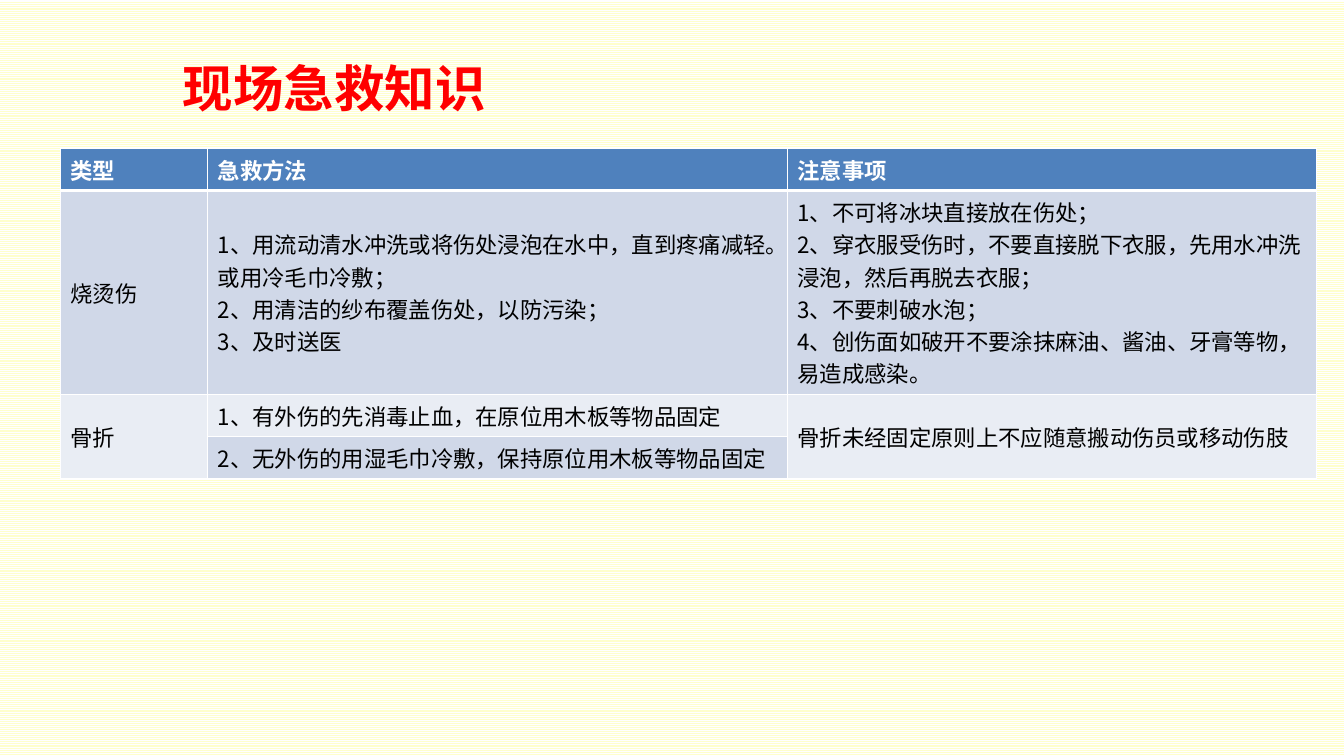
import pptx
import pptx.util
import pptx.dml.color
import pptx.enum.dml
import pptx.enum.text
import lxml.etree

RGB = pptx.dml.color.RGBColor
WHITE = RGB(0xFF, 0xFF, 0xFF)
BLACK = RGB(0, 0, 0)
RED = RGB(0xFF, 0, 0)
CREAM = RGB(0xFF, 0xFF, 0xCC)
BLUE = RGB(0x4F, 0x81, 0xBD)
DARK = RGB(0xD0, 0xD8, 0xE8)
LIGHT = RGB(0xE9, 0xED, 0xF4)
FONT = "Noto Sans CJK SC"
WIDE, HIGH = 13.33, 7.5
COLS = (1.46, 5.75, 5.25)
ROWS = (0.4, 2.02, 0.42, 0.42)
FILLS = (BLUE, DARK, LIGHT, DARK)
CELLS = (
    (("类型",), ("急救方法",), ("注意事项",)),
    (
        ("烧烫伤",),
        (
            "1、用流动清水冲洗或将伤处浸泡在水中，直到疼痛减轻。或用冷毛巾冷敷；",
            "2、用清洁的纱布覆盖伤处，以防污染；",
            "3、及时送医",
        ),
        (
            "1、不可将冰块直接放在伤处；",
            "2、穿衣服受伤时，不要直接脱下衣服，先用水冲洗浸泡，然后再脱去衣服；",
            "3、不要刺破水泡；",
            "4、创伤面如破开不要涂抹麻油、酱油、牙膏等物，易造成感染。",
        ),
    ),
    (
        ("骨折",),
        ("1、有外伤的先消毒止血，在原位用木板等物品固定",),
        ("骨折未经固定原则上不应随意搬动伤员或移动伤肢",),
    ),
    ((), ("2、无外伤的用湿毛巾冷敷，保持原位用木板等物品固定",), ()),
)


def write(frame, lines, size, color, bold, align=None):
    """Write each line as a paragraph holding one run."""
    for index, line in enumerate(lines):
        para = frame.add_paragraph() if index else frame.paragraphs[0]
        para.alignment = align
        run = para.add_run()
        run.text = line
        font = run.font
        font.name, font.size, font.bold = FONT, pptx.util.Pt(size), bold
        font.color.rgb = color
        east = lxml.etree.SubElement(run._r.rPr, pptx.oxml.ns.qn("a:ea"))
        east.set("typeface", FONT)


def edge(cell, side, width):
    """Draw one white border of a cell."""
    name = pptx.oxml.ns.qn
    props = cell._tc.get_or_add_tcPr()
    line = lxml.etree.SubElement(props, name("a:ln" + side))
    line.set("w", str(pptx.util.Pt(width)))
    fill = lxml.etree.SubElement(line, name("a:solidFill"))
    lxml.etree.SubElement(fill, name("a:srgbClr")).set("val", str(WHITE))


def backdrop(slide):
    """Fill the slide with thin cream lines on white."""
    fill = slide.background.fill
    fill.patterned()
    fill.pattern = pptx.enum.dml.MSO_PATTERN.LIGHT_HORIZONTAL
    fill.fore_color.rgb = CREAM
    fill.back_color.rgb = WHITE


def heading(slide, box):
    """Place the red title in the box."""
    title = slide.shapes.title
    title.left, title.top, title.width, title.height = map(pptx.util.Inches, box)
    frame = title.text_frame
    frame.auto_size = pptx.enum.text.MSO_AUTO_SIZE.NONE
    frame.vertical_anchor = pptx.enum.text.MSO_ANCHOR.MIDDLE
    write(frame, ("现场急救知识",), 36, RED, True, pptx.enum.text.PP_ALIGN.CENTER)


def chart(slide, box):
    """Build the first-aid table in the box."""
    shape = slide.shapes.add_table(len(ROWS), len(COLS), *map(pptx.util.Inches, box))
    table = shape.table
    for col, width in zip(table.columns, COLS):
        col.width = pptx.util.Inches(width)
    for row, height in zip(table.rows, ROWS):
        row.height = pptx.util.Inches(height)
    for r, row in enumerate(CELLS):
        for c, lines in enumerate(row):
            cell = table.cell(r, c)
            cell.vertical_anchor = pptx.enum.text.MSO_ANCHOR.MIDDLE
            for side in "LRTB":
                thick = (r, side) in ((0, "B"), (1, "T"))
                edge(cell, side, 3 if thick else 1)
            cell.fill.solid()
            cell.fill.fore_color.rgb = FILLS[r]
            write(cell.text_frame, lines, 16, BLACK if r else WHITE, r == 0)
    for c in (0, 2):
        table.cell(2, c).merge(table.cell(3, c))


def main():
    """Build and save the slide."""
    deck = pptx.Presentation()
    deck.slide_width = pptx.util.Inches(WIDE)
    deck.slide_height = pptx.util.Inches(HIGH)
    slide = deck.slides.add_slide(deck.slide_layouts[5])
    backdrop(slide)
    heading(slide, (0.43, 0.52, 5.77, 0.7))
    chart(slide, (0.6, 1.47, sum(COLS), sum(ROWS)))
    deck.save("out.pptx")


if __name__ == "__main__":
    main()
